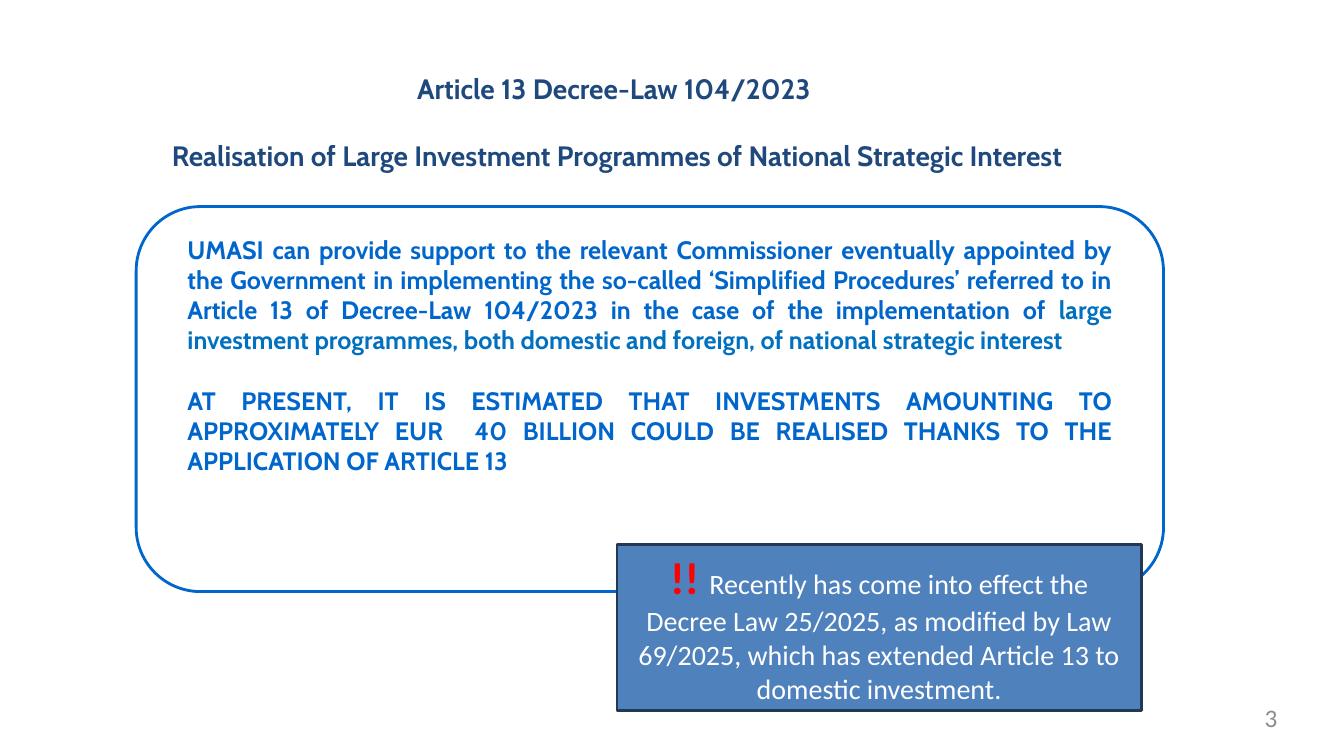
from pptx import Presentation
from pptx.dml.color import RGBColor
from pptx.enum.shapes import MSO_SHAPE as Preset
from pptx.enum.text import MSO_ANCHOR as Anchor, MSO_AUTO_SIZE as AutoSize, PP_ALIGN as Align
from pptx.util import Inches, Pt

WIDTH, HEIGHT = Inches(13.33), Inches(7.5)
NAVY, BLUE, TEAL_BLUE = "1F497D", "0066CC", "0070C0"
STEEL, EDGE, RED, WHITE, GREY = "4F81BD", "233953", "FF0000", "FFFFFF", "8C8C8C"

HEADING = {"name": "Cabin", "size": Pt(20), "bold": True}
BODY = {"name": "Cabin", "size": Pt(18), "bold": True}
ALERT = {"name": "Calibri", "size": Pt(32), "bold": True}
NOTE = {"name": "Calibri", "size": Pt(20), "bold": False}
NUMBER = {"name": "Calibri", "size": Pt(18), "bold": False}
NO_INSETS = {"margin_left": 0, "margin_top": 0, "margin_right": 0, "margin_bottom": 0}


def rgb(code):
    return RGBColor.from_string(code)


def area(left, top, width, height):
    """Turn percentages of the slide's size into lengths."""
    return [round(side * share / 100) for side, share in
            zip((WIDTH, HEIGHT, WIDTH, HEIGHT), (left, top, width, height))]


def apply(target, values):
    for name, value in values.items():
        setattr(target, name, value)


def write(box, paragraphs, align, gap=0, **frame_values):
    """Fill a box with paragraphs, each a list of (text, colour, font values)."""
    frame = box.text_frame
    apply(frame, {"word_wrap": True, "auto_size": AutoSize.NONE, **frame_values})
    for index, spans in enumerate(paragraphs):
        para = frame.add_paragraph() if index else frame.paragraphs[0]
        para.alignment = align
        if index:
            para.space_before = Pt(gap)
        for text, colour, font_values in spans:
            span = para.add_run()
            span.text = text
            apply(span.font, font_values)
            span.font.color.rgb = rgb(colour)


def add_title(page, place, lines):
    title = page.shapes.title
    apply(title, dict(zip(("left", "top", "width", "height"), place)))
    write(title, [[(line, NAVY, HEADING)] for line in lines], Align.CENTER, gap=24,
          **{**NO_INSETS, "margin_top": Inches(0.35), "vertical_anchor": Anchor.TOP})


def add_text(page, place, paragraphs, align, gap=0):
    write(page.shapes.add_textbox(*place), paragraphs, align, gap, **NO_INSETS)


def add_panel(page, preset, place, line_colour, fill_colour=None):
    panel = page.shapes.add_shape(preset, *place)
    panel.shadow.inherit = False
    if fill_colour:
        panel.fill.solid()
        panel.fill.fore_color.rgb = rgb(fill_colour)
    else:
        panel.fill.background()
    panel.line.color.rgb = rgb(line_colour)
    panel.line.width = Pt(2)
    return panel


def main():
    deck = Presentation()
    apply(deck, {"slide_width": WIDTH, "slide_height": HEIGHT})
    page = deck.slides.add_slide(deck.slide_layouts.get_by_name("Title Only"))

    add_panel(page, Preset.ROUNDED_RECTANGLE, area(10.13, 27.33, 76.44, 50.93), BLUE)
    add_title(page, area(3.08, 4.8, 85.67, 26), [
        "Article 13 Decree-Law 104/2023 ",
        "Realisation of Large Investment Programmes of National Strategic Interest",
    ])
    add_text(page, area(72.02, 92.93, 23.03, 5.07), [[("3", GREY, NUMBER)]], Align.RIGHT)
    add_text(page, area(13.95, 30.93, 68.79, 39.47), [
        [("UMASI can provide support to the relevant Commissioner eventually appointed by "
          "the Government in implementing the so-called ‘Simplified Procedures’ referred to in "
          "Article 13 of Decree-Law 104/2023 in the case of the implementation of ", BLUE, BODY),
         ("large investment programmes, both domestic and foreign, of national strategic "
          "interest", TEAL_BLUE, BODY)],
        [("AT PRESENT, IT IS ESTIMATED THAT INVESTMENTS AMOUNTING TO APPROXIMATELY "
          "EUR  40 BILLION COULD BE REALISED THANKS TO THE APPLICATION OF ARTICLE 13",
          BLUE, BODY)],
    ], Align.JUSTIFY, gap=21.6)

    callout = add_panel(page, Preset.RECTANGLE, area(45.91, 72, 39.01, 22), EDGE, STEEL)
    write(callout, [[
        ("!! ", RED, ALERT),
        ("Recently has come into effect the Decree Law 25/2025, as modified by Law 69/2025, "
         "which has extended Article 13 to domestic investment.", WHITE, NOTE),
    ]], Align.CENTER, vertical_anchor=Anchor.MIDDLE)

    deck.save("out.pptx")


if __name__ == "__main__":
    main()
